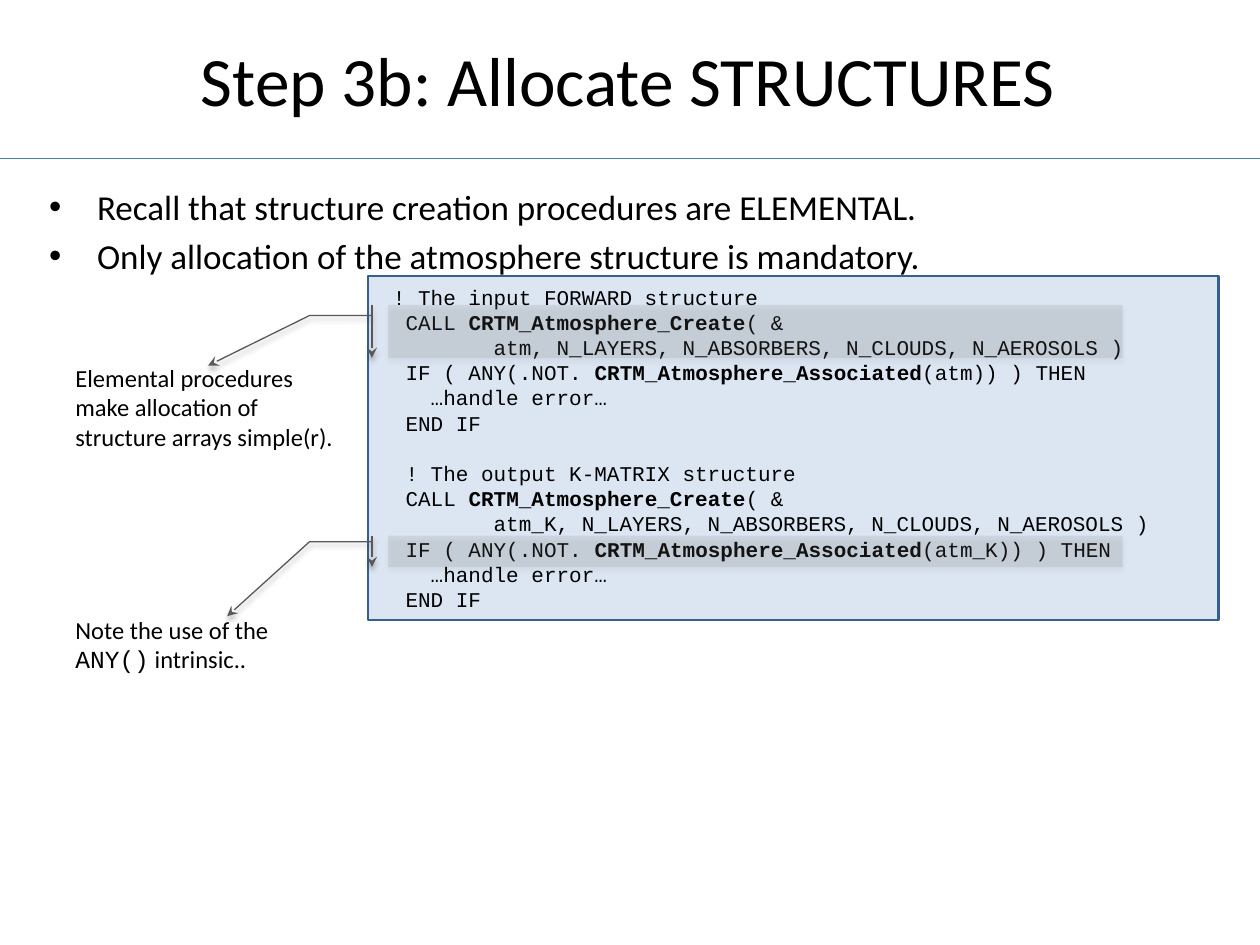
from lxml.etree import SubElement
from pptx import Presentation
from pptx.dml.color import RGBColor
from pptx.enum.shapes import MSO_CONNECTOR as Connector, MSO_SHAPE as Shape
from pptx.enum.text import MSO_ANCHOR as Anchor, MSO_AUTO_SIZE as AutoSize, PP_ALIGN as Align
from pptx.oxml.ns import qn
from pptx.util import Inches, Pt

BODY_FONT, CODE_FONT = "Calibri", "Courier New"
BULLETS = [
    "Recall that structure creation procedures are ELEMENTAL.",
    "Only allocation of the atmosphere structure is mandatory.",
]
CODE_BLOCKS = [
    (" ! The input FORWARD structure", "atm"),
    ("  ! The output K-MATRIX structure", "atm_K"),
]
NOTES = [
    (2.42, 0.42, (1.146, -0.245), 2.83,
     "Elemental procedures make allocation of structure arrays simple(r)."),
    (4.25, 0.25, (2.563, -0.219), 4.83,
     "Note the use of the *ANY()* intrinsic.."),
]


def color(value):
    """Turn a hex string into a colour."""
    return RGBColor.from_string(value)


def place(shape, box):
    """Move a shape to a box of left, top, width and height in inches."""
    for name, value in zip(("left", "top", "width", "height"), box):
        setattr(shape, name, Inches(value))


def style(target, formats):
    """Set every attribute named in a dict of format values."""
    for name, value in formats.items():
        setattr(target, name, value)


def write(paragraph, text, size, font=BODY_FONT, marked=None):
    """Write runs, giving the parts between asterisks the marked format."""
    for index, part in enumerate(text.split("*")):
        run = paragraph.add_run()
        run.text = part
        style(run.font, {"name": font, "size": Pt(size)})
        run.font.color.rgb = color("000000")
        if index % 2:
            style(run.font, marked)


def paint(shape, fill, line, width):
    """Give a shape a plain fill and outline without a shadow."""
    shape.fill.solid()
    shape.fill.fore_color.rgb = color(fill)
    shape.line.color.rgb = color(line)
    shape.line.width = Pt(width)
    shape.shadow.inherit = False


def add_title(slide, box):
    """Fill the title placeholder and draw the rule below it."""
    title = slide.shapes.title
    place(title, box)
    style(title.text_frame, {"vertical_anchor": Anchor.MIDDLE, "auto_size": AutoSize.NONE})
    paragraph = title.text_frame.paragraphs[0]
    paragraph.alignment = Align.CENTER
    write(paragraph, "Step 3b: Allocate STRUCTURES", 39.6)
    rule = slide.shapes.add_connector(
        Connector.STRAIGHT, 0, Inches(1.26), Inches(10), Inches(1.26))
    rule.line.color.rgb = color("4B7EBC")
    rule.line.width = Pt(0.75)
    SubElement(rule._element.spPr, qn("a:effectLst"))


def add_bullets(slide, box):
    """Fill the body placeholder with the bulleted list."""
    body = slide.placeholders[1]
    place(body, box)
    frame = body.text_frame
    frame.auto_size = AutoSize.NONE
    for index, text in enumerate(BULLETS):
        paragraph = frame.add_paragraph() if index else frame.paragraphs[0]
        properties = paragraph._p.get_or_add_pPr()
        properties.set("marL", str(Inches(0.38)))
        properties.set("indent", str(Inches(-0.38)))
        SubElement(properties, qn("a:buChar"), char="•")
        paragraph.space_before = Pt(4 if index else 0)
        write(paragraph, text, 20)


def add_code(slide, box):
    """Draw the code panel, with a gap between its two blocks."""
    panel = slide.shapes.add_shape(Shape.RECTANGLE, 0, 0, 0, 0)
    place(panel, box)
    paint(panel, "DCE6F2", "376092", 1.5)
    frame = panel.text_frame
    style(frame, {"word_wrap": True, "vertical_anchor": Anchor.MIDDLE})
    for block, (comment, name) in enumerate(CODE_BLOCKS):
        lines = [
            comment,
            "  CALL *CRTM_Atmosphere_Create*( &",
            f"         {name}, N_LAYERS, N_ABSORBERS, N_CLOUDS, N_AEROSOLS )",
            f"  IF ( ANY(.NOT. *CRTM_Atmosphere_Associated*({name})) ) THEN",
            "    …handle error…",
            "  END IF",
        ]
        for index, line in enumerate(lines):
            paragraph = frame.add_paragraph() if block or index else frame.paragraphs[0]
            gap = Pt(14.4 if block and not index else 0)
            style(paragraph, {"alignment": Align.LEFT, "line_spacing": Pt(14.4),
                              "space_before": gap})
            write(paragraph, line, 12, CODE_FONT, {"bold": True})


def add_callout(group, box, tip):
    """Highlight a box of code with a leader line that ends at the tip."""
    callout = group.shapes.add_shape(Shape.LINE_CALLOUT_2_ACCENT_BAR, 0, 0, 0, 0)
    place(callout, box)
    for index, value in enumerate((0.201, -0.022, 0.201, -0.107, *tip)):
        callout.adjustments[index] = value
    paint(callout, "808080", "595959", 0.75)
    properties = callout._element.spPr
    fill = properties.find(qn("a:solidFill")).find(qn("a:srgbClr"))
    SubElement(fill, qn("a:alpha"), val="15000")
    SubElement(properties.find(qn("a:ln")), qn("a:tailEnd"), type="stealth")
    shadow = SubElement(
        properties.find(qn("a:effectLst")), qn("a:outerShdw"), blurRad=str(Pt(3.1)),
        dist=str(Pt(1.8)), dir="5400000", rotWithShape="0")
    shade = SubElement(shadow, qn("a:srgbClr"), val="000000")
    SubElement(shade, qn("a:alpha"), val="35000")


def add_note(slide, box, callout_box, tip, text):
    """Group a highlight of the code with its note."""
    group = slide.shapes.add_group_shape()
    add_callout(group, callout_box, tip)
    note = group.shapes.add_textbox(0, 0, 0, 0)
    place(note, box)
    note.text_frame.word_wrap = True
    write(note.text_frame.paragraphs[0], text, 14, marked={"name": CODE_FONT})


def main():
    """Build the slide and save it."""
    presentation = Presentation()
    style(presentation, {"slide_width": Inches(10), "slide_height": Inches(7.5)})
    slide = presentation.slides.add_slide(presentation.slide_layouts[1])
    add_title(slide, (1.15, 0, 7.67, 1.25))
    add_bullets(slide, (0.29, 1.42, 9.42, 0.75))
    add_code(slide, (2.92, 2.19, 6.75, 2.73))
    for top, height, tip, note_top, text in NOTES:
        add_note(slide, (0.5, note_top, 2.25, 0.92), (3.08, top, 5.83, height), tip, text)
    presentation.save("out.pptx")


if __name__ == "__main__":
    main()
